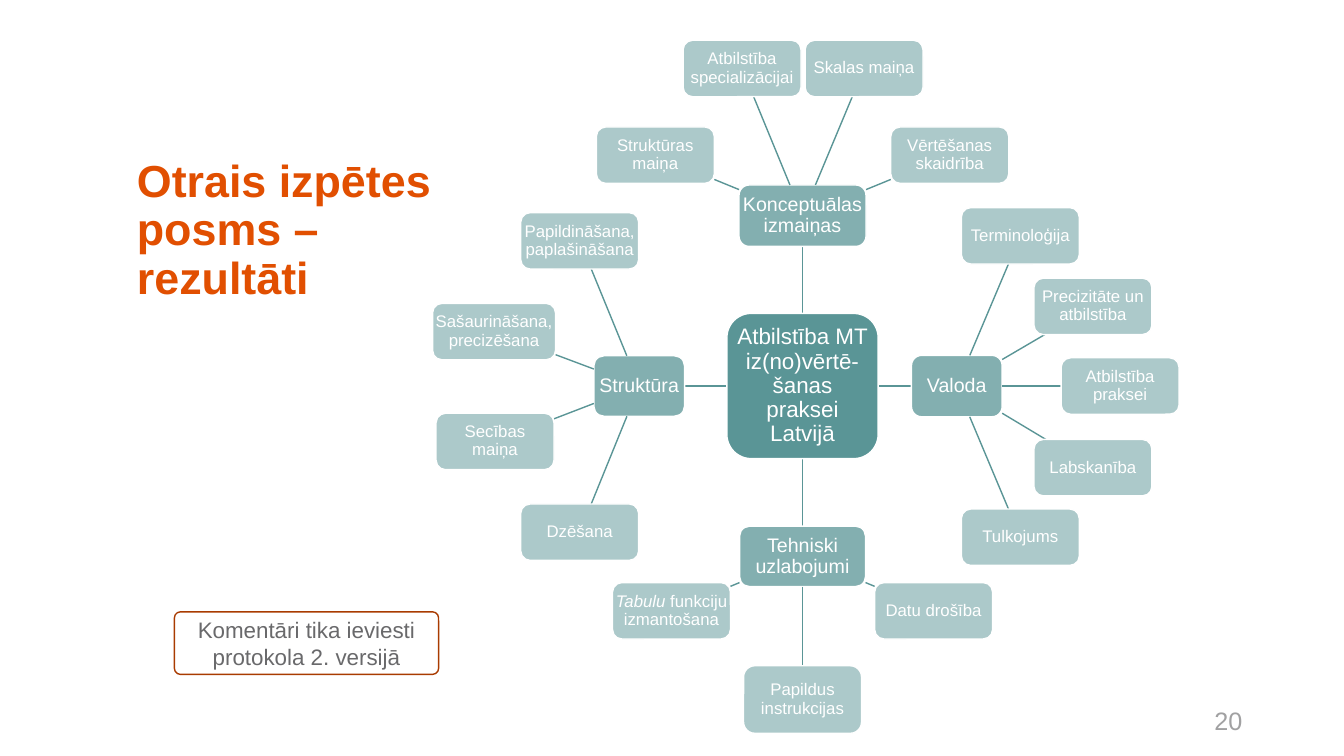
from lxml import etree
from pptx import Presentation
from pptx.dml.color import RGBColor
from pptx.enum.shapes import MSO_CONNECTOR, MSO_SHAPE
from pptx.enum.text import MSO_ANCHOR, PP_ALIGN
from pptx.oxml.ns import qn
from pptx.util import Inches, Pt

LEFT, CENTER, RIGHT = PP_ALIGN.LEFT, PP_ALIGN.CENTER, PP_ALIGN.RIGHT
MIDDLE = MSO_ANCHOR.MIDDLE
ROUNDED = MSO_SHAPE.ROUNDED_RECTANGLE
STRAIGHT = MSO_CONNECTOR.STRAIGHT
COLORS = {"teal": "5A9596", "white": "FFFFFF", "orange": "E14F01",
          "rust": "A93B01", "gray": "69696B", "number": "A1A1A2"}
LEAF = (1.17, 0.56)

HUB = (7.96, 3.83, 1.5, 1.44)
BRANCHES = [
    ("Konceptuālas izmaiņas", (7.96, 2.14, 1.26, 0.61), [
        ("Struktūras maiņa", (6.5, 1.54, *LEAF)),
        ("Atbilstība specializācijai", (7.36, 0.68, *LEAF)),
        ("Skalas maiņa", (8.57, 0.68, *LEAF)),
        ("Vērtēšanas skaidrība", (9.42, 1.54, *LEAF))]),
    ("Valoda", (9.49, 3.83, 0.9, 0.61), [
        ("Terminoloģija", (10.12, 2.34, *LEAF)),
        ("Precizitāte un atbilstība", (10.84, 3.04, *LEAF)),
        ("Atbilstība praksei", (11.11, 3.83, *LEAF)),
        ("Labskanība", (10.84, 4.64, *LEAF)),
        ("Tulkojums", (10.12, 5.33, *LEAF))]),
    ("Tehniski uzlabojumi", (7.96, 5.52, 1.25, 0.6), [
        ("Datu drošība", (9.26, 6.06, *LEAF)),
        ("Papildus instrukcijas", (7.96, 6.94, 1.17, 0.67)),
        (("Tabulu", " funkciju izmantošana"), (6.66, 6.06, *LEAF))]),
    ("Struktūra", (6.34, 3.83, 0.9, 0.6), [
        ("Dzēšana", (5.75, 5.28, *LEAF)),
        ("Secības maiņa", (4.91, 4.38, *LEAF), 0.03),
        ("Sašaurināšana, precizēšana", (4.9, 3.29, 1.22, 0.56)),
        ("Papildināšana, paplašināšana", (5.75, 2.39, *LEAF))]),
]


def color(name):
    """Return the named colour."""
    return RGBColor.from_string(COLORS[name])


def edge_point(box, target):
    """Return where the ray from the centre of box to that of target leaves box."""
    x, y, w, h = box
    dx, dy = target[0] - x, target[1] - y
    scale = 1 / max(abs(dx) / (w / 2), abs(dy) / (h / 2))
    return Inches(x + dx * scale), Inches(y + dy * scale)


class Slide:
    """Draws styled elements on one slide."""

    def __init__(self, prs):
        """Add a blank slide."""
        self.shapes = prs.slides.add_slide(prs.slide_layouts[6]).shapes
        self.font = "Arial"

    def set_text(self, s, text, size, ink, align=CENTER, spacing=1.0,
                 insets=(0.1, 0.05), bold=False):
        """Fill a shape with one paragraph; a tuple starts with an italic run."""
        tf = s.text_frame
        tf.word_wrap = True
        tf.vertical_anchor = MIDDLE
        tf.margin_left = tf.margin_right = Inches(insets[0])
        tf.margin_top = tf.margin_bottom = Inches(insets[1])
        p = tf.paragraphs[0]
        p.alignment, p.line_spacing = align, spacing
        p.font.name, p.font.size, p.font.bold = self.font, Pt(size), bold
        p.font.color.rgb = color(ink)
        parts = (text,) if isinstance(text, str) else text
        for i, part in enumerate(parts):
            r = p.add_run()
            r.text = part
            if len(parts) > 1 and i == 0:
                r.font.italic = True

    def label(self, text, x, y, w, h, size, ink, **style):
        """Add a text box."""
        s = self.shapes.add_textbox(Inches(x), Inches(y), Inches(w), Inches(h))
        self.set_text(s, text, size, ink, **style)

    def rounded(self, x, y, w, h, line):
        """Add a rounded rectangle with an outline."""
        s = self.shapes.add_shape(ROUNDED, Inches(x), Inches(y), Inches(w), Inches(h))
        s.shadow.inherit = False
        s.line.color.rgb = color(line)
        s.line.width = Pt(1)
        return s

    def node(self, text, box, size, opacity, inset=0):
        """Add a diagram node around its centre."""
        x, y, w, h = box
        s = self.rounded(x - w / 2, y - h / 2, w, h, "white")
        s.fill.solid()
        s.fill.fore_color.rgb = color("teal")
        if opacity < 100:
            fill = s._element.spPr.find(qn("a:solidFill"))
            etree.SubElement(fill[0], qn("a:alpha"), val=str(opacity * 1000))
        self.set_text(s, text, size, "white", spacing=0.9, insets=(inset, inset))

    def spoke(self, start, end):
        """Join two nodes from edge to edge."""
        s = self.shapes.add_connector(STRAIGHT, *edge_point(start, end),
                                      *edge_point(end, start))
        s.line.color.rgb = color("teal")
        s.line.width = Pt(1)
        etree.SubElement(s._element.spPr, qn("a:effectLst"))

    def framed_note(self, text, x, y, w, h):
        """Add an outlined note."""
        s = self.rounded(x, y, w, h, "rust")
        s.adjustments[0] = 0.094
        s.fill.background()
        self.set_text(s, text, 16, "gray", insets=(0.1, 0))


def main():
    """Build the slide."""
    prs = Presentation()
    prs.slide_width, prs.slide_height = Inches(13.33), Inches(7.5)
    slide = Slide(prs)
    for _, box, _ in BRANCHES:
        slide.spoke(HUB, box)
    slide.node("Atbilstība MT iz(no)vērtē-šanas praksei Latvijā", HUB, 16, 100)
    for name, box, leaves in BRANCHES:
        slide.node(name, box, 14, 75)
        for text, leaf, *inset in leaves:
            slide.spoke(box, leaf)
            slide.node(text, leaf, 12, 50, *inset)
    slide.framed_note("Komentāri tika ieviesti protokola 2. versijā", 1.73, 6.07, 2.62, 0.62)
    slide.label("Otrais izpētes posms – rezultāti", 1.26, 1.42, 3.56, 1.75,
                32, "orange", align=LEFT, spacing=0.9, bold=True)
    slide.label("20", 9.42, 6.95, 3, 0.4, 18, "number", align=RIGHT)
    prs.save("out.pptx")


if __name__ == "__main__":
    main()
